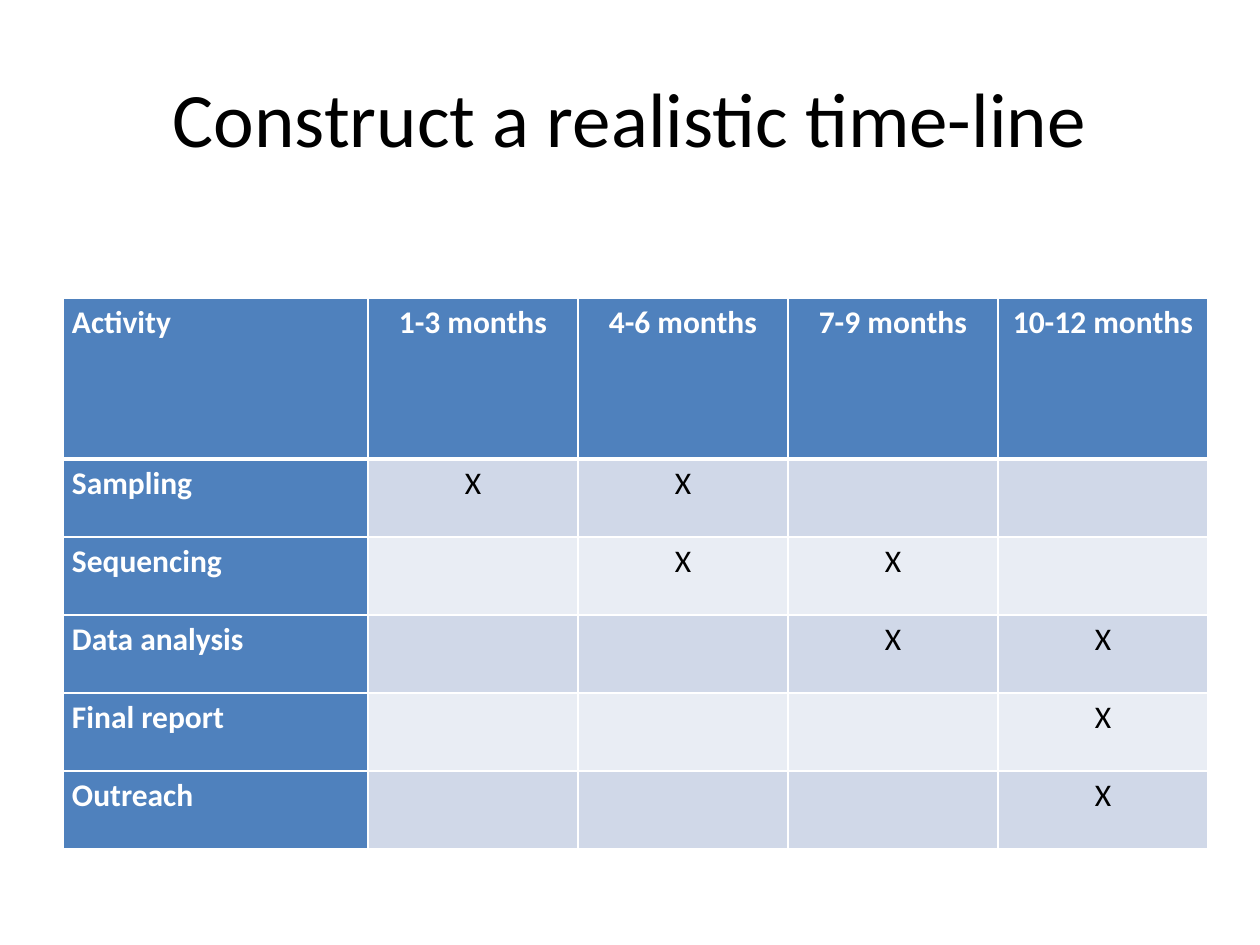
import pptx
import pptx.util
import pptx.dml.color
import pptx.enum.text
import pptx.oxml.ns
import lxml.etree

# Content
TITLE = "Construct a realistic time-line"
HEADER = ["Activity", "1-3 months", "4-6 months", "7-9 months", "10-12 months"]
ACTIVITIES = [  # name, periods in which it runs
    ("Sampling", (1, 2)),
    ("Sequencing", (2, 3)),
    ("Data analysis", (3, 4)),
    ("Final report", (4,)),
    ("Outreach", (4,)),
]
FONT = "Calibri"
BLUE, BANDS = "4F81BD", ("D0D8E8", "E9EDF4")
WHITE, BLACK = "FFFFFF", "000000"

# Layout in px
SLIDE = (1260, 945)
TITLE_BOX = (63, 38, 1134, 157)
TABLE_LEFT, TABLE_TOP = 63, 298
COLUMNS = [305] + [210] * 4
ROWS = [161] + [78] * len(ACTIVITIES)
CELL_INSET = 9

ALIGN = pptx.enum.text.PP_ALIGN
ANCHOR = pptx.enum.text.MSO_ANCHOR


def px(n):
    return pptx.util.Emu(round(n * 914400 / 126))


def rgb(color):
    return pptx.dml.color.RGBColor.from_string(color)


def format_text(p, size, color, bold, align):
    p.alignment = align
    for r in p.runs:
        r.font.name = FONT
        r.font.size = pptx.util.Pt(size)
        r.font.bold = bold
        r.font.color.rgb = rgb(color)


def set_borders(cell, widths):
    qn = pptx.oxml.ns.qn
    tc_pr = cell._tc.get_or_add_tcPr()
    for side, width in widths.items():
        ln = lxml.etree.SubElement(tc_pr, qn("a:ln" + side), w=str(pptx.util.Pt(width)))
        fill = lxml.etree.SubElement(ln, qn("a:solidFill"))
        lxml.etree.SubElement(fill, qn("a:srgbClr"), val=WHITE)


prs = pptx.Presentation()
prs.slide_width, prs.slide_height = map(px, SLIDE)
s = prs.slides.add_slide(prs.slide_layouts[6])

# Title
tf = s.shapes.add_textbox(*map(px, TITLE_BOX)).text_frame
tf.word_wrap = True
tf.vertical_anchor = ANCHOR.MIDDLE
tf.text = TITLE
format_text(tf.paragraphs[0], 44, BLACK, False, ALIGN.CENTER)

# Timeline table
grid = [HEADER] + [
    [name] + ["X" if period in periods else "" for period in range(1, len(HEADER))]
    for name, periods in ACTIVITIES
]
table = s.shapes.add_table(
    len(ROWS), len(COLUMNS), px(TABLE_LEFT), px(TABLE_TOP), px(sum(COLUMNS)), px(sum(ROWS))
).table
table.first_col = True
for column, width in zip(table.columns, COLUMNS):
    column.width = px(width)
for row, height in zip(table.rows, ROWS):
    row.height = px(height)

for i, texts in enumerate(grid):
    for j, text in enumerate(texts):
        cell = table.cell(i, j)
        heading = i == 0 or j == 0
        set_borders(cell, {"L": 1, "R": 1, "T": 3 if i == 1 else 1, "B": 3 if i == 0 else 1})
        cell.fill.solid()
        cell.fill.fore_color.rgb = rgb(BLUE if heading else BANDS[(i - 1) % 2])
        cell.margin_left = cell.margin_right = px(CELL_INSET)
        cell.margin_top = cell.margin_bottom = 0
        cell.vertical_anchor = ANCHOR.TOP
        p = cell.text_frame.paragraphs[0]
        p.text = text
        p.line_spacing = 1.15
        format_text(p, 18, WHITE if heading else BLACK, heading, ALIGN.CENTER if j else ALIGN.LEFT)

prs.save("out.pptx")
